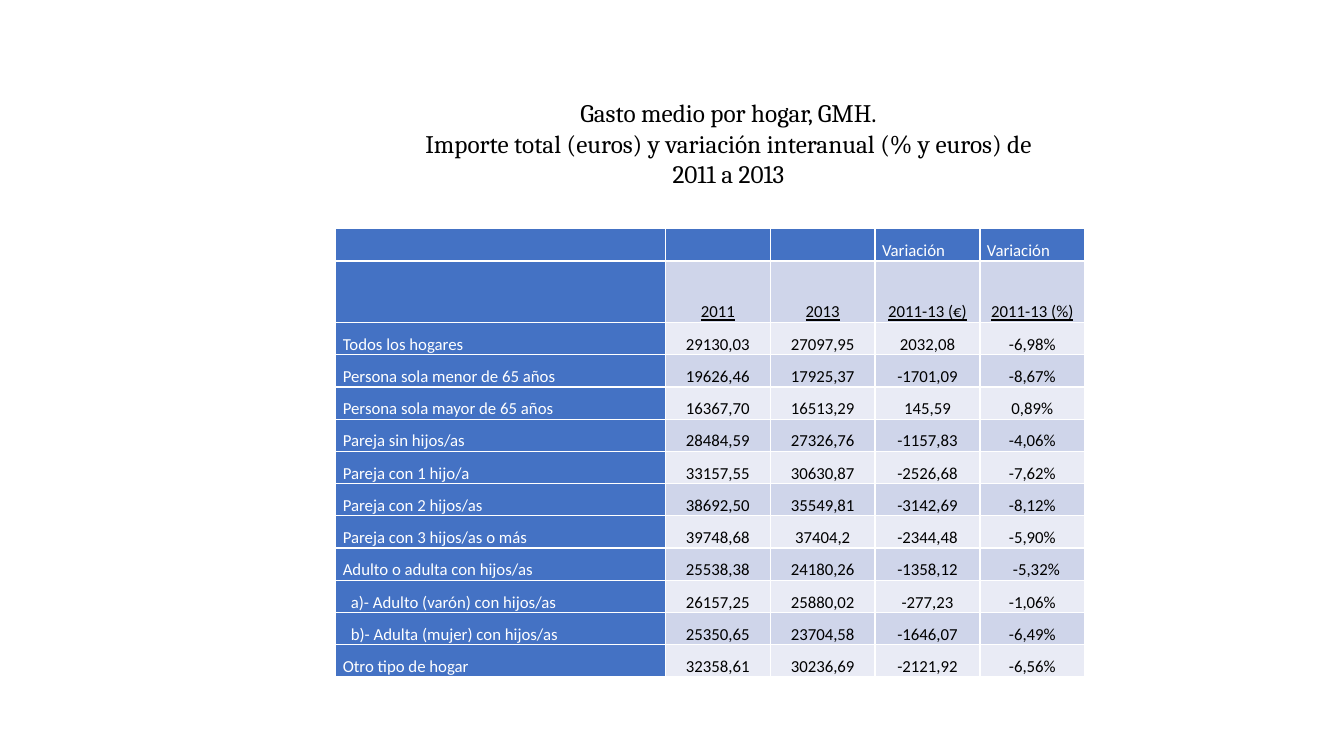
from lxml import etree
from pptx import Presentation
from pptx.dml.color import RGBColor
from pptx.enum import text as t
from pptx.oxml import ns
from pptx.util import Inches, Pt

WHITE = RGBColor(0xFF, 0xFF, 0xFF)
BLACK = RGBColor(0, 0, 0)
BLUE = RGBColor(0x44, 0x72, 0xC4)
DARK = RGBColor(0xCF, 0xD5, 0xEA)
LIGHT = RGBColor(0xE9, 0xEB, 0xF5)

TITLE = [
    "Gasto medio por hogar, GMH.",
    "Importe total (euros) y variación interanual (% y euros) de 2011 a 2013",
]
ROWS = [
    ("", "", "", "Variación", "Variación"),
    ("", "2011", "2013", "2011-13 (€)", "2011-13 (%)"),
    ("Todos los hogares", "29130,03", "27097,95", "2032,08", "-6,98%"),
    ("Persona sola menor de 65 años", "19626,46", "17925,37", "-1701,09", "-8,67%"),
    ("Persona sola mayor de 65 años", "16367,70", "16513,29", "145,59", "0,89%"),
    ("Pareja sin hijos/as", "28484,59", "27326,76", "-1157,83", "-4,06%"),
    ("Pareja con 1 hijo/a", "33157,55", "30630,87", "-2526,68", "-7,62%"),
    ("Pareja con 2 hijos/as", "38692,50", "35549,81", "-3142,69", "-8,12%"),
    ("Pareja con 3 hijos/as o más", "39748,68", "37404,2", "-2344,48", "-5,90%"),
    ("Adulto o adulta con hijos/as", "25538,38", "24180,26", "-1358,12", "-5,32%"),
    ("a)- Adulto (varón) con hijos/as", "26157,25", "25880,02", "-277,23", "-1,06%"),
    ("b)- Adulta (mujer) con hijos/as", "25350,65", "23704,58", "-1646,07", "-6,49%"),
    ("Otro tipo de hogar", "32358,61", "30236,69", "-2121,92", "-6,56%"),
]
INDENTED = {(9, 4), (10, 0), (11, 0)}  # (row, column)
WIDTHS = [3.27] + [1.04] * 4
HEIGHTS = [0.32, 0.61] + [0.32] * 11


def set_font(para, name, size, color):
    para.font.name = name
    para.font.size = Pt(size)
    para.font.color.rgb = color


def add_title(slide):
    box = slide.shapes.add_textbox(Inches(4.08), Inches(0.92), Inches(6.29), Inches(1.01))
    frame = box.text_frame
    frame.word_wrap = True
    frame.auto_size = t.MSO_AUTO_SIZE.SHAPE_TO_FIT_TEXT
    frame.text = "\n".join(TITLE)
    for para in frame.paragraphs:
        para.alignment = t.PP_ALIGN.CENTER
        set_font(para, "Cambria", 18, BLACK)


def add_borders(cell):
    """Draw thin white lines on all four sides; call before setting the fill."""
    props = cell._tc.get_or_add_tcPr()
    for side in ("a:lnL", "a:lnR", "a:lnT", "a:lnB"):
        line = etree.SubElement(props, ns.qn(side), w=str(Pt(1)))
        fill = etree.SubElement(line, ns.qn("a:solidFill"))
        etree.SubElement(fill, ns.qn("a:srgbClr"), val=str(WHITE))


def fill_cell(cell, row, col, words):
    head = row == 0 or col == 0
    add_borders(cell)
    cell.fill.solid()
    cell.fill.fore_color.rgb = BLUE if head else DARK if row % 2 else LIGHT
    cell.vertical_anchor = t.MSO_ANCHOR.BOTTOM
    cell.margin_left = Inches(0.15 if (row, col) in INDENTED else 0.07)
    cell.margin_right = Inches(0.07)
    cell.margin_top = cell.margin_bottom = 0
    if words:
        cell.text = words
    para = cell.text_frame.paragraphs[0]
    set_font(para, "Calibri", 12, WHITE if head else BLACK)
    if not head:
        para.alignment = t.PP_ALIGN.CENTER
        if row == 1:
            para.font.underline = True


def add_spending(slide):
    frame = slide.shapes.add_table(
        len(ROWS), len(WIDTHS), Inches(3.33), Inches(2.27),
        Inches(sum(WIDTHS)), Inches(sum(HEIGHTS)))
    table = frame.table
    table.first_row = table.horz_banding = False
    for column, width in zip(table.columns, WIDTHS):
        column.width = Inches(width)
    for line, height in zip(table.rows, HEIGHTS):
        line.height = Inches(height)
    for row, values in enumerate(ROWS):
        for col, words in enumerate(values):
            fill_cell(table.cell(row, col), row, col, words)


def main():
    deck = Presentation()
    deck.slide_width = Inches(13.33)
    deck.slide_height = Inches(7.5)
    slide = deck.slides.add_slide(deck.slide_layouts[6])
    add_spending(slide)
    add_title(slide)
    deck.save("out.pptx")


if __name__ == "__main__":
    main()
